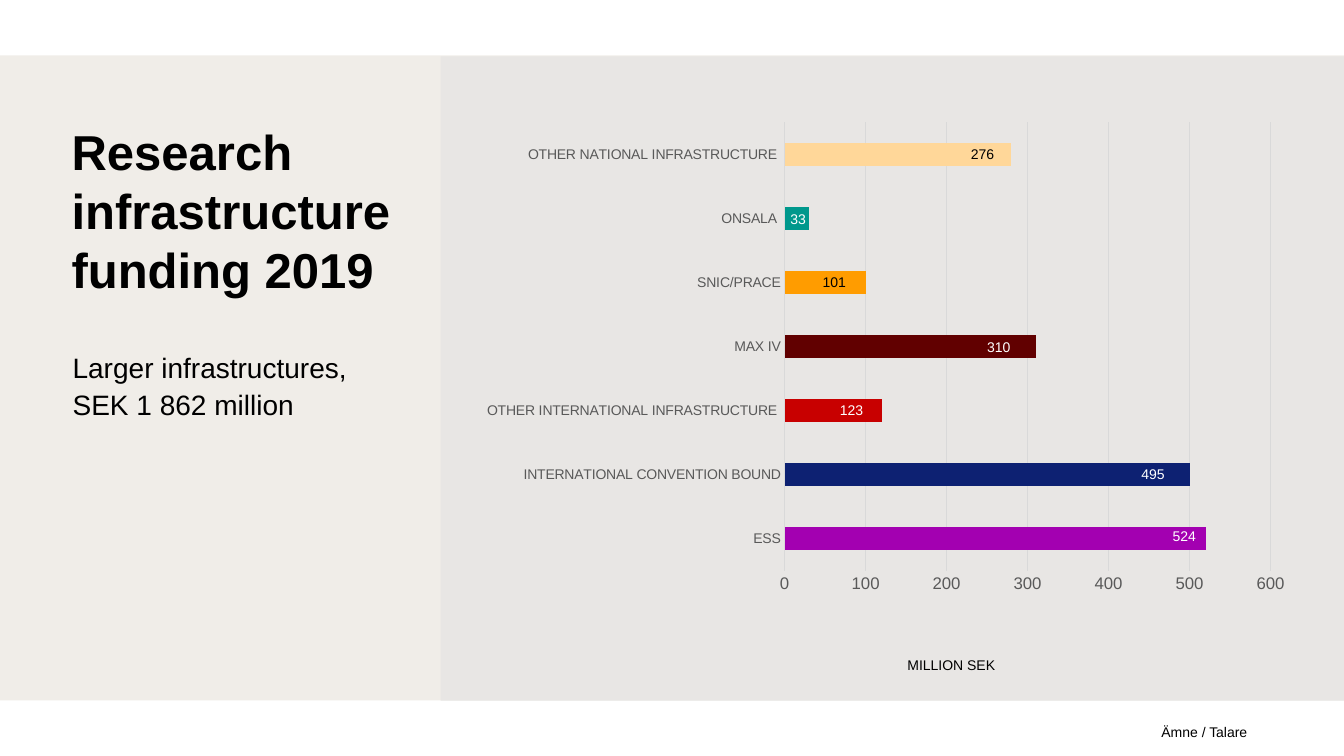
from typing import NamedTuple

from lxml.etree import SubElement
from pptx import Presentation
from pptx.chart.data import CategoryChartData
from pptx.dml.color import RGBColor
from pptx.enum.chart import XL_CHART_TYPE as ChartType, XL_TICK_MARK as TickMark
from pptx.enum.shapes import MSO_SHAPE as ShapeType
from pptx.enum.text import MSO_ANCHOR as Anchor, PP_ALIGN as Align
from pptx.oxml.ns import qn
from pptx.util import Inches, Pt

COLORS = {
    "sand": "F0EDE8", "panel": "E8E6E4", "black": "000000", "white": "FFFFFF",
    "axis_text": "595959", "grid": "D9D9D9", "purple": "A300B1", "navy": "0D2172",
    "red": "C80000", "maroon": "610000", "orange": "FF9C00", "teal": "00988C",
    "peach": "FFD799",
}
FONT = "Arial"


class Box(NamedTuple):
    left: float
    top: float
    width: float
    height: float

    def lengths(self) -> list:
        return [Inches(value) for value in self]


class Infrastructure(NamedTuple):
    name: str
    funding: int
    color: str
    label_left: float
    label_top: float
    label_color: str = "white"


INFRASTRUCTURES = [
    Infrastructure("ESS", 524, "purple", 11.63, 5.23),
    Infrastructure("INTERNATIONAL CONVENTION BOUND", 495, "navy", 11.32, 4.62),
    Infrastructure("OTHER INTERNATIONAL INFRASTRUCTURE ", 123, "red", 8.33, 3.98),
    Infrastructure("MAX IV", 310, "maroon", 9.79, 3.36),
    Infrastructure("SNIC/PRACE", 101, "orange", 8.16, 2.71, "black"),
    Infrastructure("ONSALA ", 33, "teal", 7.84, 2.09),
    Infrastructure("OTHER NATIONAL INFRASTRUCTURE ", 276, "peach", 9.63, 1.44, "black"),
]


def rgb(name: str) -> RGBColor:
    return RGBColor.from_string(COLORS[name])


def style_font(font, size: float, color: str, bold: bool = False) -> None:
    font.name, font.size, font.bold = FONT, Pt(size), bold
    font.color.rgb = rgb(color)


def add_text(slide, box: Box, text: str, *, size: float = 10, color: str = "black",
             bold: bool = False, align=Align.LEFT, anchor=Anchor.TOP,
             line_spacing: float = 1.0) -> None:
    frame = slide.shapes.add_textbox(*box.lengths()).text_frame
    frame.word_wrap = True
    frame.vertical_anchor = anchor
    frame.margin_left = frame.margin_right = frame.margin_top = frame.margin_bottom = 0
    paragraph = frame.paragraphs[0]
    paragraph.alignment, paragraph.line_spacing = align, line_spacing
    run = paragraph.add_run()
    run.text = text
    style_font(run.font, size, color, bold)


def add_panel(slide, box: Box, color: str) -> None:
    shape = slide.shapes.add_shape(ShapeType.RECTANGLE, *box.lengths())
    shape.shadow.inherit = False
    shape.fill.solid()
    shape.fill.fore_color.rgb = rgb(color)
    shape.line.fill.background()


def set_inner_plot(chart, box: Box) -> None:
    """Fix the plot area, given in fractions of the chart."""
    plot_area = chart.plots[0]._element.getparent()
    layout = plot_area.find(qn("c:layout"))
    if layout is None:
        layout = plot_area.makeelement(qn("c:layout"), {})
        plot_area.insert(0, layout)
    manual = SubElement(layout, qn("c:manualLayout"))
    settings = {"layoutTarget": "inner", "xMode": "edge", "yMode": "edge",
                **dict(zip("xywh", box))}
    for tag, value in settings.items():
        SubElement(manual, qn(f"c:{tag}")).set("val", str(value))


def style_line(line, color: str) -> None:
    line.color.rgb = rgb(color)
    line.width = Pt(0.75)


def add_funding_chart(slide, box: Box) -> None:
    """Draw the funding bars, rounded to tens."""
    data = CategoryChartData()
    data.categories = [item.name for item in INFRASTRUCTURES]
    data.add_series("Series 1", [round(item.funding, -1) for item in INFRASTRUCTURES])
    chart = slide.shapes.add_chart(ChartType.BAR_STACKED, *box.lengths(), data).chart
    chart.has_legend = chart.has_title = False
    style_font(chart.font, 10, "black")
    set_inner_plot(chart, Box(0.389, 0.0, 0.58, 0.894))

    plot = chart.plots[0]
    plot.gap_width, plot.overlap, plot.vary_by_categories = 182, 100, False
    for index, item in enumerate(INFRASTRUCTURES):
        fill = plot.series[0].points[index].format.fill
        fill.solid()
        fill.fore_color.rgb = rgb(item.color)

    for axis, size in ((chart.category_axis, 10), (chart.value_axis, 12)):
        axis.major_tick_mark = axis.minor_tick_mark = TickMark.NONE
        style_font(axis.tick_labels.font, size, "axis_text")
    style_line(chart.category_axis.format.line, "grid")
    values = chart.value_axis
    values.minimum_scale, values.maximum_scale, values.major_unit = 0, 600, 100
    values.format.line.fill.background()
    values.has_major_gridlines = True
    style_line(values.major_gridlines.format.line, "grid")


def main() -> None:
    presentation = Presentation()
    presentation.slide_width, presentation.slide_height = Inches(13.33), Inches(7.5)
    slide = presentation.slides.add_slide(presentation.slide_layouts[6])

    add_panel(slide, Box(0, 0.55, 13.33, 6.4), "sand")
    add_panel(slide, Box(4.37, 0.56, 8.96, 6.39), "panel")
    add_text(slide, Box(0.71, 1.21, 3.32, 2.02), "Research infrastructure funding 2019",
             size=35, bold=True)
    add_text(slide, Box(0.72, 3.44, 3.3, 2.94),
             "Larger infrastructures, SEK 1 862 million", size=20, line_spacing=1.1)
    add_funding_chart(slide, Box(4.55, 1.21, 8.31, 4.98))
    add_text(slide, Box(5.53, 6.51, 7.81, 0.17), "MILLION SEK", align=Align.CENTER)
    for item in INFRASTRUCTURES:
        add_text(slide, Box(item.label_left, item.label_top, 0.32, 0.17),
                 str(item.funding), color=item.label_color)
    add_text(slide, Box(7.87, 7.14, 4.5, 0.2), "Ämne / Talare",
             align=Align.RIGHT, anchor=Anchor.BOTTOM)

    presentation.save("out.pptx")


if __name__ == "__main__":
    main()
